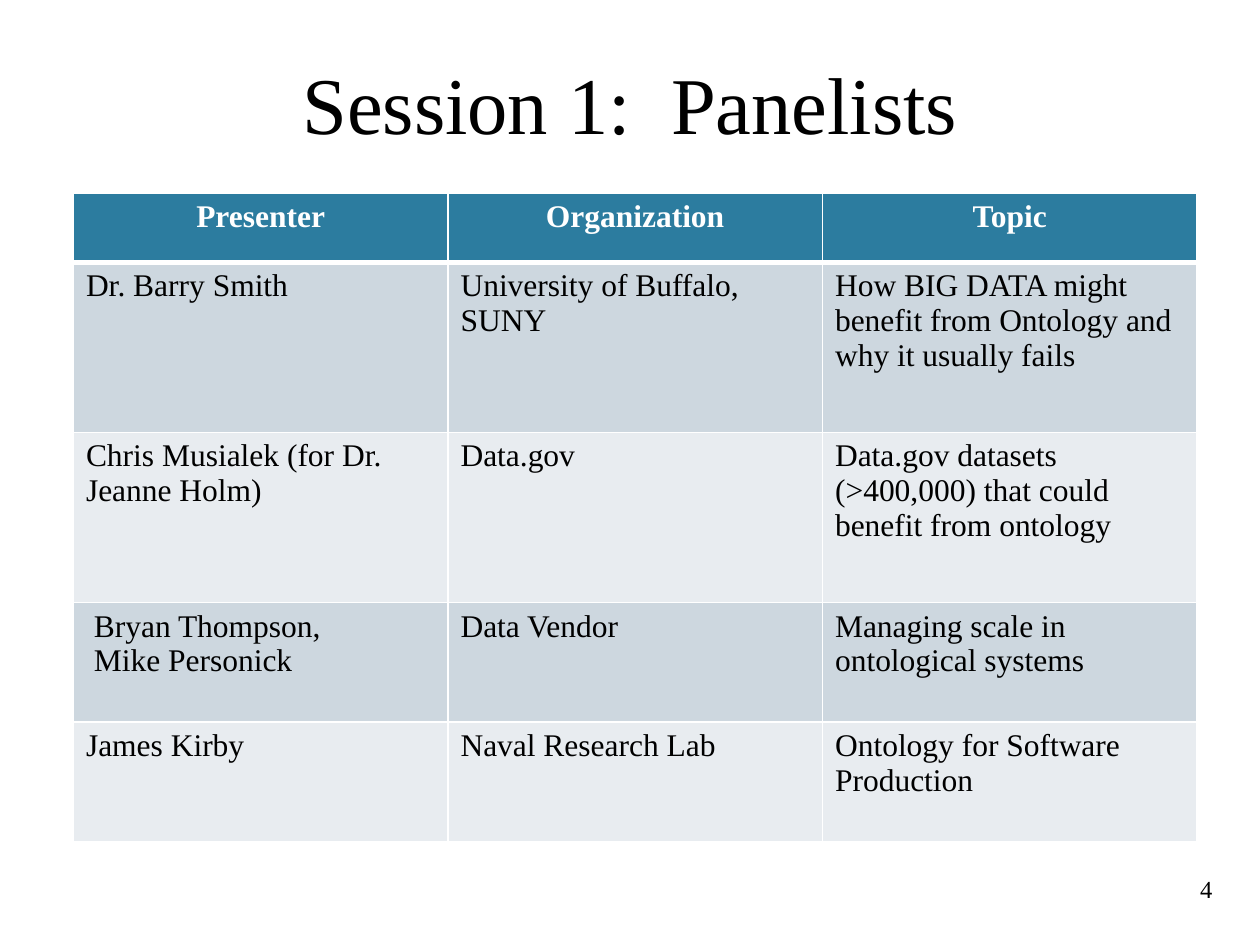
from lxml.etree import SubElement
from pptx import Presentation
from pptx.dml.color import RGBColor
from pptx.enum.text import MSO_ANCHOR, PP_ALIGN
from pptx.oxml.ns import qn
from pptx.util import Cm, Pt

FONT = "Times New Roman"
BLACK, WHITE = "000000", "FFFFFF"
HEAD, DARK, LIGHT = "2C7C9F", "CDD7DF", "E8ECF0"
HEIGHTS = [1.4, 3.43, 3.43, 2.41, 2.41]
WIDTH = 7.55
ROWS = [
    ["Presenter", "Organization", "Topic"],
    ["Dr. Barry Smith", "University of Buffalo, SUNY",
     "How BIG DATA might benefit from Ontology and why it usually fails"],
    ["Chris Musialek (for Dr. Jeanne Holm)", "Data.gov",
     "Data.gov datasets (>400,000) that could benefit from ontology"],
    [" Bryan Thompson,\n Mike Personick", "Data Vendor",
     "Managing scale in ontological systems"],
    ["James Kirby", "Naval Research Lab",
     "Ontology for Software Production"],
]


def color(code):
    return RGBColor.from_string(code)


def write(frame, text, size, align, tint=BLACK, bold=False):
    """Fill a text frame with one paragraph for each line of text."""
    frame.word_wrap = True
    for i, line in enumerate(text.split("\n")):
        para = frame.add_paragraph() if i else frame.paragraphs[0]
        para.alignment = align
        run = para.add_run()
        run.text = line
        font = run.font
        font.name, font.size, font.bold = FONT, Pt(size), bold
        font.color.rgb = color(tint)


def add_text(slide, box, text, size, align, anchor):
    frame = slide.shapes.add_textbox(*map(Cm, box)).text_frame
    frame.vertical_anchor = anchor
    write(frame, text, size, align)


def add_edges(cell, top, base):
    """Draw white cell borders; top and base are widths in points."""
    props = cell._tc.get_or_add_tcPr()
    for side, width in zip("LRTB", (1, 1, top, base)):
        line = SubElement(props, qn(f"a:ln{side}"), w=str(Pt(width)))
        fill = SubElement(line, qn("a:solidFill"))
        SubElement(fill, qn("a:srgbClr"), val=WHITE)


def add_grid(slide):
    cols = len(ROWS[0])
    table = slide.shapes.add_table(
        len(ROWS), cols, Cm(1.48), Cm(3.89),
        Cm(WIDTH * cols), Cm(sum(HEIGHTS))).table
    for col in table.columns:
        col.width = Cm(WIDTH)
    for r, (texts, height) in enumerate(zip(ROWS, HEIGHTS)):
        table.rows[r].height = Cm(height)
        head = r == 0
        shade = HEAD if head else DARK if r % 2 else LIGHT
        for c, text in enumerate(texts):
            cell = table.cell(r, c)
            add_edges(cell, 3 if r == 1 else 1, 3 if head else 1)
            cell.fill.solid()
            cell.fill.fore_color.rgb = color(shade)
            write(cell.text_frame, text, 18,
                  PP_ALIGN.CENTER if head else PP_ALIGN.LEFT,
                  WHITE if head else BLACK, head)


def main():
    deck = Presentation()
    deck.slide_width, deck.slide_height = Cm(25.4), Cm(19.05)
    slide = deck.slides.add_slide(deck.slide_layouts[6])
    add_text(slide, (1.52, -0.53, 22.35, 3.7), "Session 1:  Panelists",
             46, PP_ALIGN.CENTER, MSO_ANCHOR.BOTTOM)
    add_grid(slide)
    add_text(slide, (20.32, 17.42, 4.37, 1), "4",
             14, PP_ALIGN.RIGHT, MSO_ANCHOR.MIDDLE)
    deck.save("out.pptx")


if __name__ == "__main__":
    main()
